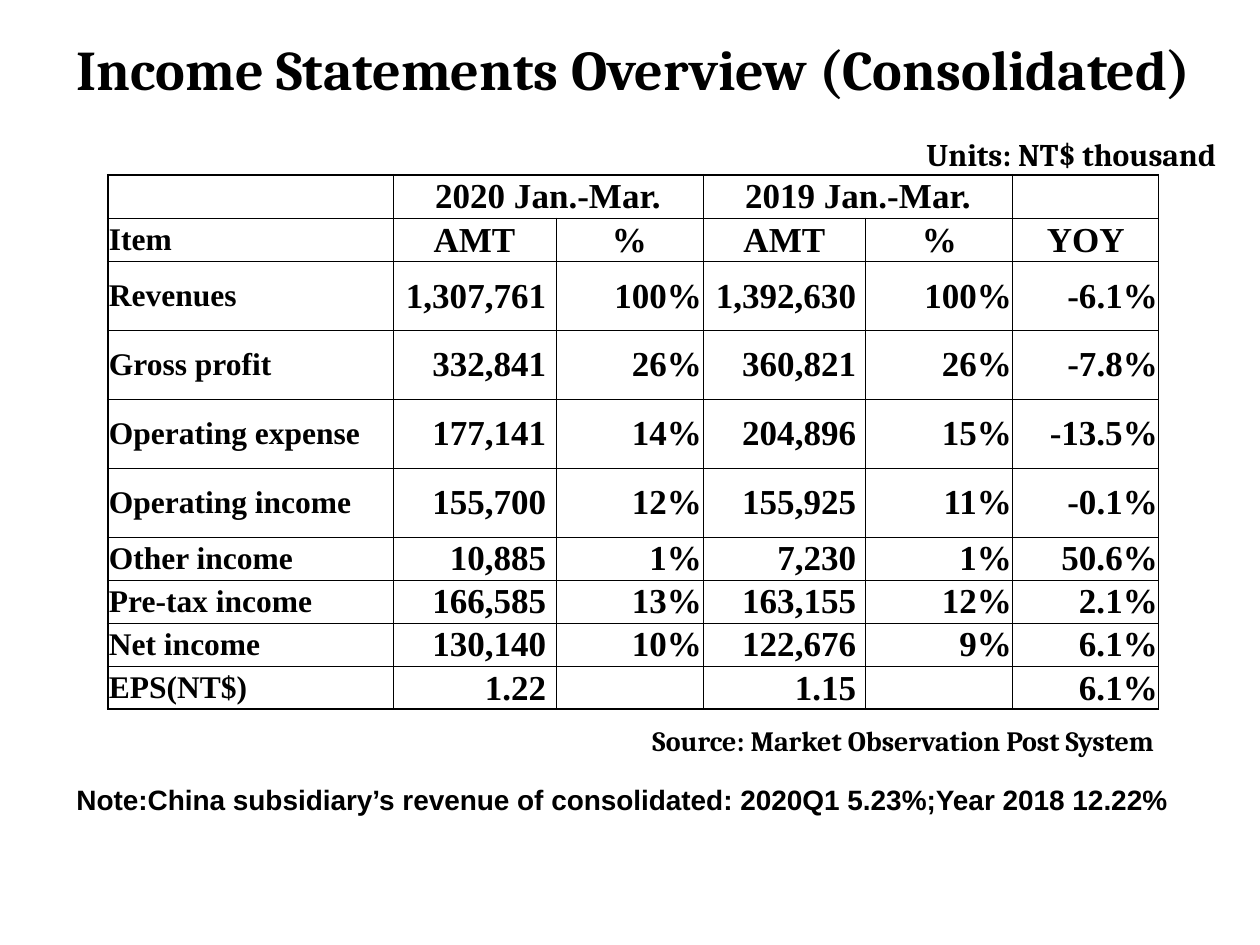
"""Build the consolidated income statement slide."""
import lxml.etree
import pptx
import pptx.dml.color
import pptx.enum.text
import pptx.oxml.ns
import pptx.util

PX = 914400 / 126
COLORS = {"text": "000000", "border": "000000"}
ALIGN = pptx.enum.text.PP_ALIGN
ANCHOR = pptx.enum.text.MSO_ANCHOR
TABLE_LEFT, TABLE_TOP = 108, 175
COLUMN_WIDTHS = [285, 163, 147, 163, 147, 146]
SHORT_ROW, TALL_ROW = 43, 69
TALL_ITEMS = {"Revenues", "Gross profit", "Operating expense", "Operating income"}
HEADER_ROWS = 2
ROWS = [
    ["", "2020 Jan.-Mar.", "", "2019 Jan.-Mar.", "", ""],
    ["Item", "AMT", "%", "AMT", "%", "YOY"],
    ["Revenues", "1,307,761 ", "100%", "1,392,630 ", "100%", "-6.1%"],
    ["Gross profit", "332,841 ", "26%", "360,821 ", "26%", "-7.8%"],
    ["Operating expense", "177,141 ", "14%", "204,896 ", "15%", "-13.5%"],
    ["Operating income", "155,700 ", "12%", "155,925 ", "11%", "-0.1%"],
    ["Other income", "10,885 ", "1%", "7,230 ", "1%", "50.6%"],
    ["Pre-tax income", "166,585 ", "13%", "163,155 ", "12%", "2.1%"],
    ["Net income", "130,140 ", "10%", "122,676 ", "9%", "6.1%"],
    ["EPS(NT$)", "1.22 ", "", "1.15 ", "", "6.1%"],
]


def px(length):
    """Turn whole pixels into EMU."""
    return pptx.util.Emu(round(length * PX))


def write_text(frame, text, font="Cambria", size=16, align=ALIGN.LEFT):
    """Write one bold line of text into a text frame."""
    para = frame.paragraphs[0]
    para.alignment = align
    span = para.add_run()
    span.text = text
    span.font.name = font
    span.font.size = pptx.util.Pt(size)
    span.font.bold = True
    span.font.color.rgb = pptx.dml.color.RGBColor.from_string(COLORS["text"])


def add_label(page, text, left, top, width, height, anchor=ANCHOR.TOP, **style):
    """Add a wrapping text box."""
    box = page.shapes.add_textbox(px(left), px(top), px(width), px(height))
    box.text_frame.word_wrap = True
    box.text_frame.vertical_anchor = anchor
    write_text(box.text_frame, text, **style)


def set_borders(cell, **widths):
    """Draw the cell's left, right, top and bottom borders in points."""
    properties = cell._tc.get_or_add_tcPr()
    for side in ("L", "R", "T", "B"):
        width = pptx.util.Pt(widths.get(side, 0.5))
        line = lxml.etree.SubElement(
            properties, pptx.oxml.ns.qn(f"a:ln{side}"), w=str(int(width)))
        fill = lxml.etree.SubElement(line, pptx.oxml.ns.qn("a:solidFill"))
        lxml.etree.SubElement(
            fill, pptx.oxml.ns.qn("a:srgbClr"), val=COLORS["border"])


def fill_cell(cell, text, row, column):
    """Format one table cell by its place in the grid."""
    cell.margin_left = cell.margin_right = cell.margin_top = px(1)
    cell.margin_bottom = 0
    cell.vertical_anchor = ANCHOR.MIDDLE
    heavy = {"L": column == 0, "T": row == 0, "B": row == len(ROWS) - 1}
    set_borders(cell, **{side: 1.5 for side, outer in heavy.items() if outer})
    cell.fill.background()
    if not text:
        return
    if column == 0:
        size, align = 18, ALIGN.LEFT
    else:
        size, align = 20, ALIGN.CENTER if row < HEADER_ROWS else ALIGN.RIGHT
    write_text(cell.text_frame, text, font="Times New Roman", size=size, align=align)


def add_income_table(page):
    """Add the income table with its two merged period headings."""
    heights = [TALL_ROW if row[0] in TALL_ITEMS else SHORT_ROW for row in ROWS]
    table = page.shapes.add_table(
        len(ROWS), len(COLUMN_WIDTHS), px(TABLE_LEFT), px(TABLE_TOP),
        px(sum(COLUMN_WIDTHS)), px(sum(heights))).table
    table.first_row = table.horz_banding = False
    for column, width in zip(table.columns, COLUMN_WIDTHS):
        column.width = px(width)
    for row, height in zip(table.rows, heights):
        row.height = px(height)
    for row, values in enumerate(ROWS):
        for column, text in enumerate(values):
            fill_cell(table.cell(row, column), text, row, column)
    for column in (1, 3):
        table.cell(0, column).merge(table.cell(0, column + 1))


def main():
    """Build and save the deck."""
    deck = pptx.Presentation()
    deck.slide_width, deck.slide_height = px(1260), px(945)
    page = deck.slides.add_slide(deck.slide_layouts[6])
    add_label(page, "Income Statements Overview (Consolidated)", 25, 21, 1218, 95,
              anchor=ANCHOR.MIDDLE, size=32, align=ALIGN.CENTER)
    add_label(page, "Units: NT$ thousand", 914, 129, 348, 50, size=18)
    add_label(page, "Source: Market Observation Post System", 640, 717, 547, 47)
    add_income_table(page)
    add_label(page, "Note:China subsidiary’s revenue of consolidated: "
              "2020Q1 5.23%;Year 2018 12.22%", 64, 776, 1255, 118, font="Arial")
    deck.save("out.pptx")


if __name__ == "__main__":
    main()
